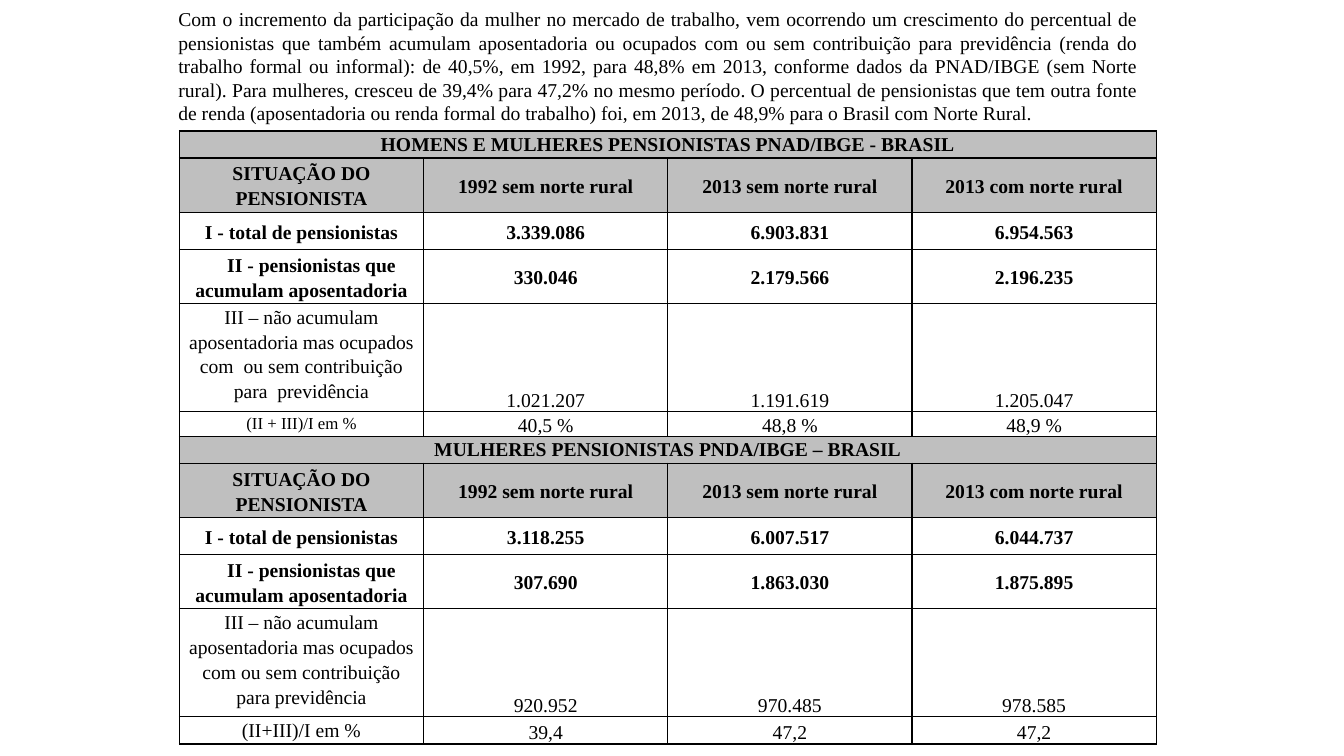
"""Build the slide on pensioners who also hold a pension or a job."""
from dataclasses import dataclass

from lxml import etree
from pptx import Presentation
from pptx import util as u
from pptx.dml.color import RGBColor
from pptx.enum import text as t
from pptx.oxml import ns

BLACK = RGBColor(0x00, 0x00, 0x00)
GREY = RGBColor(0xBF, 0xBF, 0xBF)
FONT = "Times New Roman"
SLIDE_WIDTH, SLIDE_HEIGHT = u.Inches(13.33), u.Inches(7.5)
COLUMN_COUNT = 4
TABLE_WIDTH = 72.69

INTRODUCTION = (
    "Com o incremento da participação da mulher no mercado de trabalho, vem ocorrendo um "
    "crescimento do percentual de pensionistas que também acumulam aposentadoria ou ocupados "
    "com ou sem contribuição para previdência (renda do trabalho formal ou informal): de 40,5%, "
    "em 1992, para 48,8% em 2013, conforme dados da PNAD/IBGE (sem Norte rural). Para mulheres, "
    "cresceu de 39,4% para 47,2% no mesmo período. O percentual de pensionistas que tem outra "
    "fonte de renda (aposentadoria ou renda formal do trabalho) foi, em 2013, de 48,9% para o "
    "Brasil com Norte Rural."
)
HEADINGS = ("SITUAÇÃO DO PENSIONISTA", "1992 sem norte rural",
            "2013 sem norte rural", "2013 com norte rural")


@dataclass(frozen=True)
class RowStyle:
    """Look of one kind of table row; height is a percentage of the slide."""
    height: float
    bold: bool = True
    filled: bool = False
    anchor: t.MSO_ANCHOR = t.MSO_ANCHOR.MIDDLE
    label_size: int = 14
    label_indent: float = 0


@dataclass(frozen=True)
class Row:
    """Texts of one table row with their style."""
    style: RowStyle
    texts: tuple[str, ...]


BAND = RowStyle(3.2, filled=True, anchor=t.MSO_ANCHOR.TOP)
HEADER = RowStyle(6.67, filled=True)
TOTAL = RowStyle(4.93)
RETIRED = RowStyle(6.67, label_indent=0.2)
WORKING = RowStyle(14.27, bold=False, anchor=t.MSO_ANCHOR.TOP)
SHARE = RowStyle(3.2, bold=False, anchor=t.MSO_ANCHOR.TOP)
SMALL_SHARE = RowStyle(3.2, bold=False, anchor=t.MSO_ANCHOR.TOP, label_size=12)

ROWS = (
    Row(BAND, ("HOMENS E MULHERES PENSIONISTAS PNAD/IBGE - BRASIL",)),
    Row(HEADER, HEADINGS),
    Row(TOTAL, ("I - total de pensionistas", "3.339.086", "6.903.831", "6.954.563")),
    Row(RETIRED, ("II - pensionistas que acumulam aposentadoria",
                  "330.046", "2.179.566", "2.196.235")),
    Row(WORKING, ("III – não acumulam aposentadoria mas ocupados com  ou sem contribuição "
                  "para  previdência", "1.021.207", "1.191.619", "1.205.047")),
    Row(SMALL_SHARE, ("(II + III)/I em %", "40,5 %", "48,8 %", "48,9 %")),
    Row(BAND, ("MULHERES PENSIONISTAS PNDA/IBGE – BRASIL",)),
    Row(HEADER, HEADINGS),
    Row(TOTAL, ("I - total de pensionistas", "3.118.255", "6.007.517", "6.044.737")),
    Row(RETIRED, ("II - pensionistas que acumulam aposentadoria",
                  "307.690", "1.863.030", "1.875.895")),
    Row(WORKING, ("III – não acumulam aposentadoria mas ocupados com ou sem contribuição "
                  "para previdência", "920.952", "970.485", "978.585")),
    Row(SHARE, ("(II+III)/I em %", "39,4", "47,2", "47,2")),
)


def across(percent: float) -> int:
    """Turn a percentage of the slide width into a length."""
    return round(SLIDE_WIDTH * percent / 100)


def down(percent: float) -> int:
    """Turn a percentage of the slide height into a length."""
    return round(SLIDE_HEIGHT * percent / 100)


def write(frame, content: str, *, size: int = 14, bold: bool = False,
          align=t.PP_ALIGN.CENTER, spacing: float = 1.0, indent: float = 0) -> None:
    """Write one formatted paragraph into a text frame."""
    paragraph = frame.paragraphs[0]
    paragraph.alignment = align
    paragraph.line_spacing = spacing
    if indent:
        paragraph._p.get_or_add_pPr().set("indent", str(u.Inches(indent)))
    run = paragraph.add_run()
    run.text = content
    run.font.name, run.font.size, run.font.bold = FONT, u.Pt(size), bold
    run.font.color.rgb = BLACK


def add_borders(cell) -> None:
    """Draw a thin black line on each side of a cell."""
    properties = cell._tc.get_or_add_tcPr()
    for side in ("a:lnL", "a:lnR", "a:lnT", "a:lnB"):
        line = etree.SubElement(properties, ns.qn(side), w=str(u.Pt(1)))
        fill = etree.SubElement(line, ns.qn("a:solidFill"))
        etree.SubElement(fill, ns.qn("a:srgbClr"), val=str(BLACK))


def format_cell(cell, style: RowStyle, is_figure: bool) -> None:
    """Set the borders, fill, margins and anchor of a cell."""
    add_borders(cell)
    if style.filled:
        cell.fill.solid()
        cell.fill.fore_color.rgb = GREY
    else:
        cell.fill.background()
    low_figure = is_figure and not style.bold
    cell.margin_left = cell.margin_right = u.Inches(0.01 if low_figure else 0.04)
    cell.margin_top = u.Inches(0.01 if low_figure else 0)
    cell.margin_bottom = 0
    cell.vertical_anchor = t.MSO_ANCHOR.BOTTOM if low_figure else style.anchor


def add_introduction(slide) -> None:
    """Add the justified paragraph above the table."""
    box = slide.shapes.add_textbox(across(12.53), down(0.27), across(72.92), down(17.07))
    box.text_frame.word_wrap = True
    box.text_frame.auto_size = t.MSO_AUTO_SIZE.SHAPE_TO_FIT_TEXT
    write(box.text_frame, INTRODUCTION, align=t.PP_ALIGN.JUSTIFY)


def add_pensioner_table(slide) -> None:
    """Add the table of pensioners by situation and year."""
    height = sum(row.style.height for row in ROWS)
    table = slide.shapes.add_table(len(ROWS), COLUMN_COUNT, across(13.35), down(17.33),
                                   across(TABLE_WIDTH), down(height)).table
    table.first_row = table.horz_banding = False
    for column in table.columns:
        column.width = across(TABLE_WIDTH / COLUMN_COUNT)
    for row_index, row in enumerate(ROWS):
        style = row.style
        table.rows[row_index].height = down(style.height)
        for column_index in range(COLUMN_COUNT):
            format_cell(table.cell(row_index, column_index), style, column_index > 0)
        if len(row.texts) == 1:
            table.cell(row_index, 0).merge(table.cell(row_index, COLUMN_COUNT - 1))
        for column_index, content in enumerate(row.texts):
            is_label = column_index == 0
            write(table.cell(row_index, column_index).text_frame, content, bold=style.bold,
                  size=style.label_size if is_label else 14,
                  spacing=1.15 if is_label or style.bold else 1.0,
                  indent=style.label_indent if is_label else 0)


def main() -> None:
    """Build and save the presentation."""
    presentation = Presentation()
    presentation.slide_width, presentation.slide_height = SLIDE_WIDTH, SLIDE_HEIGHT
    slide = presentation.slides.add_slide(presentation.slide_layouts[6])
    add_introduction(slide)
    add_pensioner_table(slide)
    presentation.save("out.pptx")


if __name__ == "__main__":
    main()
